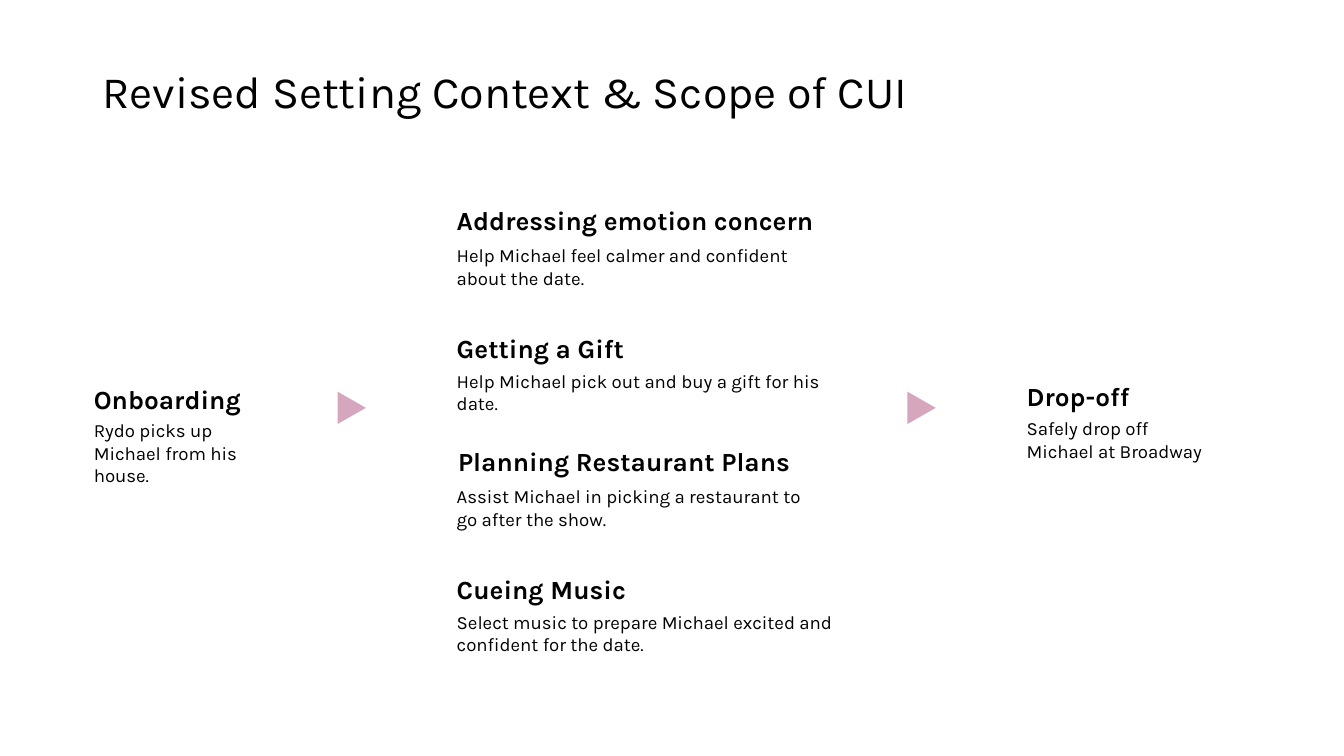
"""Build a slide that maps a ride's stages, from onboarding to drop-off."""
from dataclasses import dataclass

from pptx import Presentation
from pptx.dml.color import RGBColor
from pptx.enum.shapes import MSO_SHAPE
from pptx.enum.text import MSO_ANCHOR, MSO_AUTO_SIZE, PP_ALIGN
from pptx.util import Inches, Pt

TOP = MSO_ANCHOR.TOP
FIXED = MSO_AUTO_SIZE.NONE
LEFT = PP_ALIGN.LEFT
ARROW = MSO_SHAPE.ISOSCELES_TRIANGLE
WIDE = Inches(10)
HIGH = WIDE * 9 // 16
CELL = WIDE // 100
INK = {"text": "000000", "arrow": "D5A6BD"}
FRAME = {
    "word_wrap": True,
    "auto_size": FIXED,
    "vertical_anchor": TOP,
    "margin_left": CELL,
    "margin_right": CELL,
    "margin_top": CELL,
    "margin_bottom": CELL,
}
HEAD = {"size": Pt(14), "bold": True}
BODY = {"size": Pt(10), "bold": False}
TITLE = {"size": Pt(24), "bold": False}


@dataclass
class Stage:
    """Hold a stage's words and its place on the grid."""
    head: str
    body: str
    col: float
    row: float
    drop: float
    wide: float = 30.2
    tall: float = 4
    span: float = 30.2
    rise: float = 4
    shift: float = 0


SIDE = {"wide": 15.3, "tall": 7.4, "span": 14.8, "rise": 3.3}
STAGES = [
    Stage("Onboarding", "Rydo picks up Michael from his house.", 6, 27.5, 2.7, **SIDE),
    Stage("Addressing emotion concern",
          "Help Michael feel calmer and confident about the date.", 33, 14.2, 2.96, 28.6),
    Stage("Getting a Gift",
          "Help Michael pick out and buy a gift for his date.", 33, 23.74, 2.76),
    Stage("Planning Restaurant Plans",
          "Assist Michael in picking a restaurant to go after the show.",
          33, 32.14, 2.96, 28.6, shift=0.1),
    Stage("Cueing Music",
          "Select music to prepare Michael excited and confident for the date.", 33, 41.7, 2.74),
    Stage("Drop-off", "Safely drop off Michael at Broadway", 75.4, 27.3, 2.74, **SIDE),
]
ARROWS = [24.97, 67.37]


def grid(*cells: float) -> list[int]:
    """Turn counts of grid cells into lengths."""
    return [round(n * CELL) for n in cells]


def write(shape, text: str, style: dict, after: float = 0) -> None:
    """Put one styled paragraph into a shape."""
    frame = shape.text_frame
    for key, value in FRAME.items():
        setattr(frame, key, value)
    para = frame.paragraphs[0]
    para.alignment = LEFT
    para.line_spacing = 1.0
    para.space_before = Pt(0)
    para.space_after = Pt(after)
    run = para.add_run()
    run.text = text
    for key, value in {"name": "Karla", **style}.items():
        setattr(run.font, key, value)
    run.font.color.rgb = RGBColor.from_string(INK["text"])


def draw_stage(slide, stage: Stage) -> None:
    """Draw a stage's heading and the note below it."""
    place = grid(stage.col + stage.shift, stage.row, stage.span, stage.rise)
    write(slide.shapes.add_textbox(*place), stage.head, HEAD)
    place = grid(stage.col, stage.row + stage.drop, stage.wide, stage.tall)
    write(slide.shapes.add_textbox(*place), stage.body, BODY, 16)


def draw_arrow(slide, col: float) -> None:
    """Draw a triangle that points to the next column."""
    arrow = slide.shapes.add_shape(ARROW, *grid(col, 29.3, 2.4, 2.1))
    arrow.rotation = 90
    arrow.shadow.inherit = False
    arrow.fill.solid()
    arrow.fill.fore_color.rgb = RGBColor.from_string(INK["arrow"])
    arrow.line.fill.background()


def main() -> None:
    """Build and save the deck."""
    deck = Presentation()
    deck.slide_width, deck.slide_height = WIDE, HIGH
    slide = deck.slides.add_slide(deck.slide_layouts[5])
    title = slide.shapes.title
    title.left, title.top, title.width, title.height = grid(6.6, 3.74, 71.3, 6)
    write(title, "Revised Setting Context & Scope of CUI", TITLE)
    for stage in STAGES:
        draw_stage(slide, stage)
    for col in ARROWS:
        draw_arrow(slide, col)
    deck.save("out.pptx")


if __name__ == "__main__":
    main()
